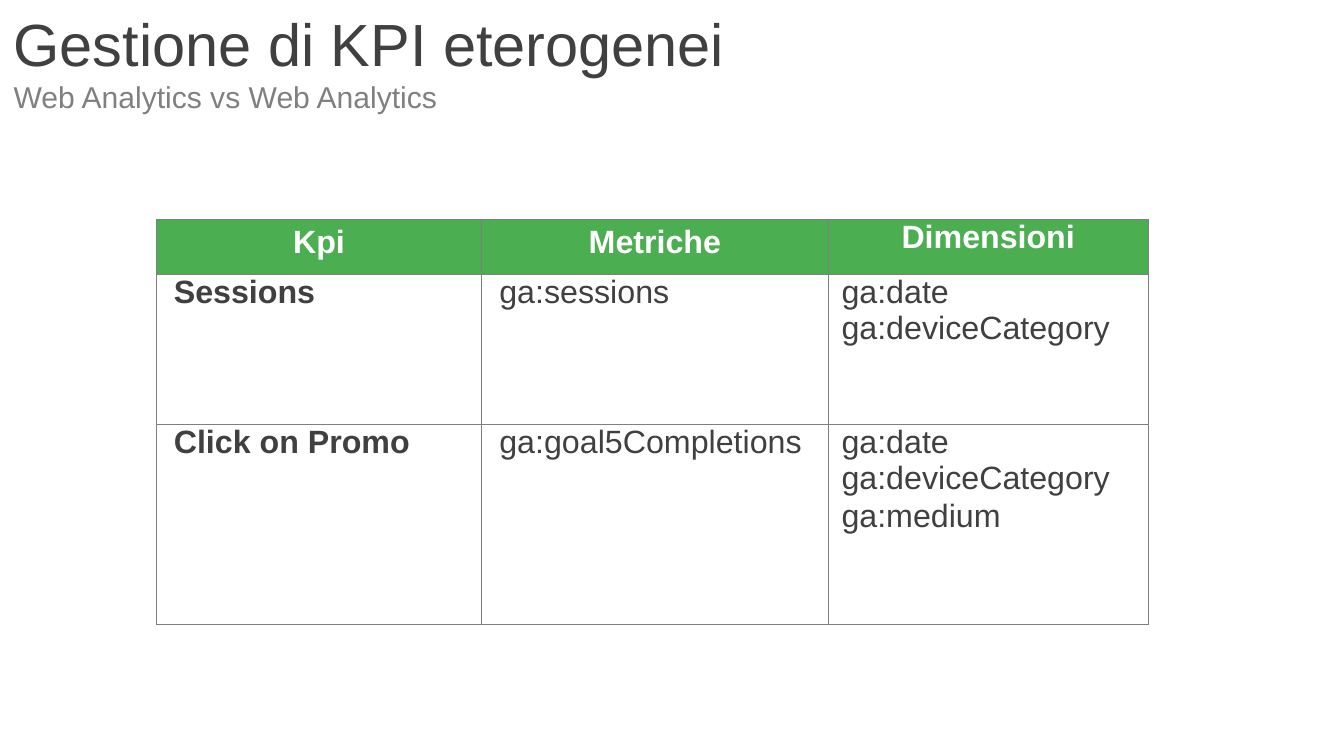
"""Build the slide on heterogeneous KPIs with its table of metrics and dimensions."""
from dataclasses import dataclass
from typing import Optional

from lxml.etree import SubElement
from pptx import Presentation
from pptx.dml.color import RGBColor
from pptx.enum.text import MSO_AUTO_SIZE, PP_ALIGN as Align
from pptx.oxml.ns import qn
from pptx.util import Pt

PX = 9144
FONT = "Arial"
WHITE = RGBColor(0xFF, 0xFF, 0xFF)
DARK = RGBColor(0x40, 0x40, 0x40)
GRAY = RGBColor(0x80, 0x80, 0x80)
GREEN = RGBColor(0x4B, 0xAE, 0x50)
BORDER = RGBColor(0x7F, 0x7F, 0x7F)
COLS = (646, 687, 636)
ROWS = (110, 297, 396)


@dataclass(frozen=True)
class Line:
    text: str
    before: int = 0
    after: int = 0
    spacing: Optional[float] = None


@dataclass(frozen=True)
class Cell:
    lines: tuple[Line, ...]
    indent: int = 28
    bold: bool = False
    header: bool = False


def header(text: str, spacing: Optional[float] = None) -> Cell:
    """Describe a heading cell."""
    return Cell((Line(text, 6, 6, spacing),), indent=0, bold=True, header=True)


def dimensions(first: str, *others: str) -> Cell:
    """Describe a cell that lists dimensions."""
    return Cell((Line(first, before=3), *(Line(t, after=3) for t in others)), indent=20)


TABLE = (
    (header("Kpi", 1.15), header("Metriche", 1.15), header("Dimensioni")),
    (
        Cell((Line("Sessions", 8),), bold=True),
        Cell((Line("ga:sessions", 8),)),
        dimensions("ga:date", "ga:deviceCategory"),
    ),
    (
        Cell((Line("Click on Promo", 8),), bold=True),
        Cell((Line("ga:goal5Completions", 3),)),
        dimensions("ga:date", "ga:deviceCategory", "ga:medium"),
    ),
)


def write(p, text: str, *, size: int, color: RGBColor, bold: bool = False,
          align: Align = Align.LEFT, indent: int = 0, before: int = 0,
          after: int = 0, spacing: Optional[float] = None) -> None:
    """Put formatted text in a paragraph."""
    p.alignment = align
    p.space_before, p.space_after = Pt(before), Pt(after)
    if spacing:
        p.line_spacing = spacing
    pPr = p._p.get_or_add_pPr()
    pPr.set("marL", str(indent * PX))
    pPr.set("indent", "0")
    r = p.add_run()
    r.text = text
    r.font.name, r.font.size, r.font.bold = FONT, Pt(size), bold
    r.font.color.rgb = color


def set_margins(box, x: int, y: int) -> None:
    """Set equal side margins and equal top and bottom margins."""
    box.margin_left = box.margin_right = x * PX
    box.margin_top = box.margin_bottom = y * PX


def add_borders(cell) -> None:
    """Draw a thin line on each side of a table cell."""
    tcPr = cell._tc.get_or_add_tcPr()
    for side in ("lnL", "lnR", "lnT", "lnB"):
        ln = SubElement(tcPr, qn(f"a:{side}"), w=str(Pt(1)))
        fill = SubElement(ln, qn("a:solidFill"))
        SubElement(fill, qn("a:srgbClr"), val=str(BORDER))


def fill_cell(cell, content: Cell) -> None:
    """Format a table cell and write its lines."""
    set_margins(cell, 7, 0)
    add_borders(cell)
    if content.header:
        cell.fill.solid()
        cell.fill.fore_color.rgb = GREEN
    else:
        cell.fill.background()
    tf = cell.text_frame
    for i, line in enumerate(content.lines):
        p = tf.add_paragraph() if i else tf.paragraphs[0]
        write(p, line.text, size=46, bold=content.bold, indent=content.indent,
              color=WHITE if content.header else DARK,
              align=Align.CENTER if content.header else Align.JUSTIFY,
              before=line.before, after=line.after, spacing=line.spacing)


def add_title(s) -> None:
    """Add the title and the subtitle."""
    tf = s.shapes.add_textbox(0, 0, 1801 * PX, 242 * PX).text_frame
    tf.word_wrap = True
    tf.auto_size = MSO_AUTO_SIZE.SHAPE_TO_FIT_TEXT
    set_margins(tf, 27, 13)
    write(tf.paragraphs[0], "Gestione di KPI eterogenei", size=85, color=DARK)
    write(tf.add_paragraph(), "Web Analytics vs Web Analytics", size=43, color=GRAY)


def add_kpi_table(s) -> None:
    """Add the table of KPIs."""
    table = s.shapes.add_table(len(ROWS), len(COLS), 310 * PX, 435 * PX,
                               sum(COLS) * PX, sum(ROWS) * PX).table
    table.first_row = table.horz_banding = False
    for column, width in zip(table.columns, COLS):
        column.width = width * PX
    for row, height, contents in zip(table.rows, ROWS, TABLE):
        row.height = height * PX
        for cell, content in zip(row.cells, contents):
            fill_cell(cell, content)


def main() -> None:
    """Build and save the slide."""
    prs = Presentation()
    prs.slide_width, prs.slide_height = 2667 * PX, 1500 * PX
    s = prs.slides.add_slide(prs.slide_layouts[6])
    add_title(s)
    add_kpi_table(s)
    prs.save("out.pptx")


if __name__ == "__main__":
    main()
